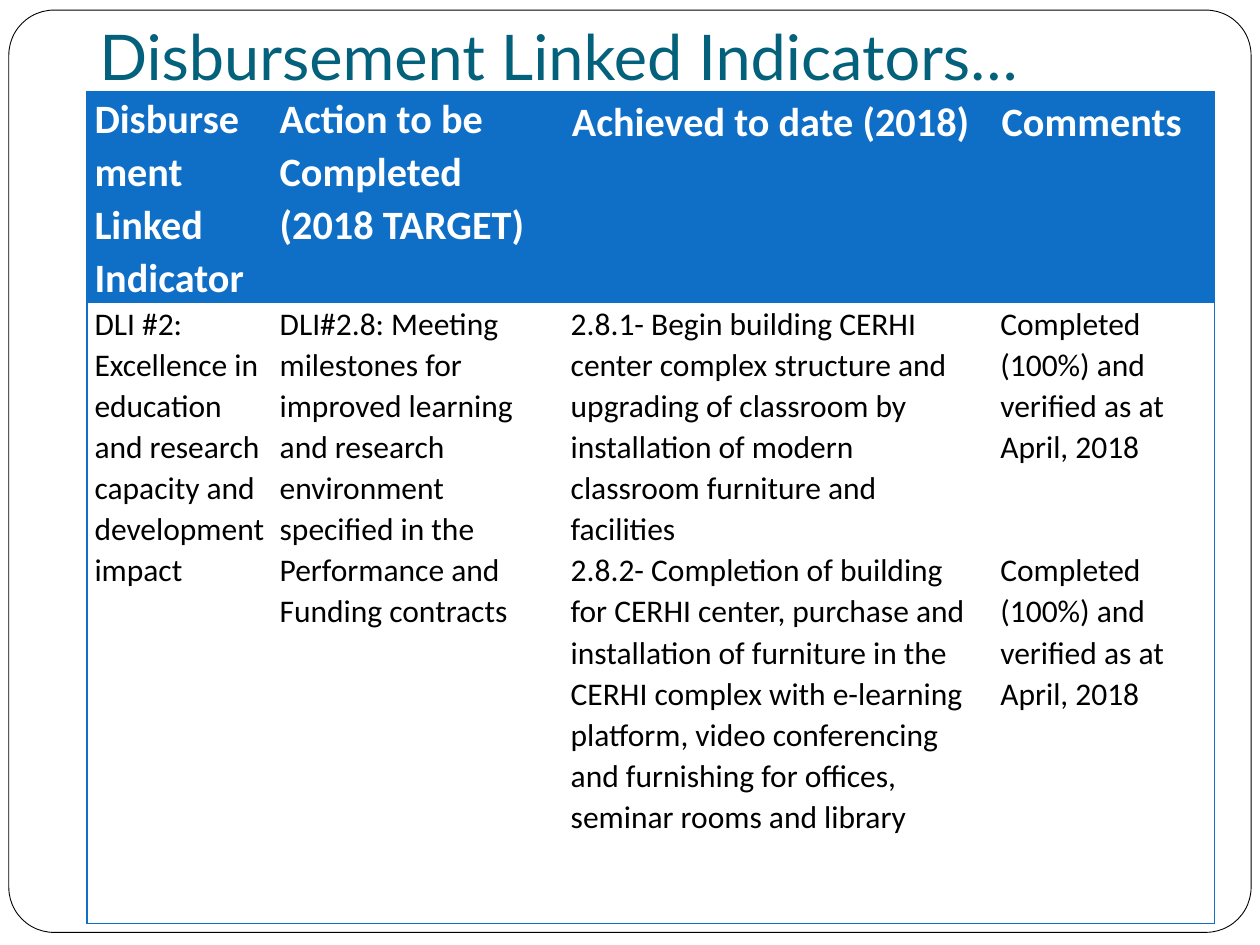
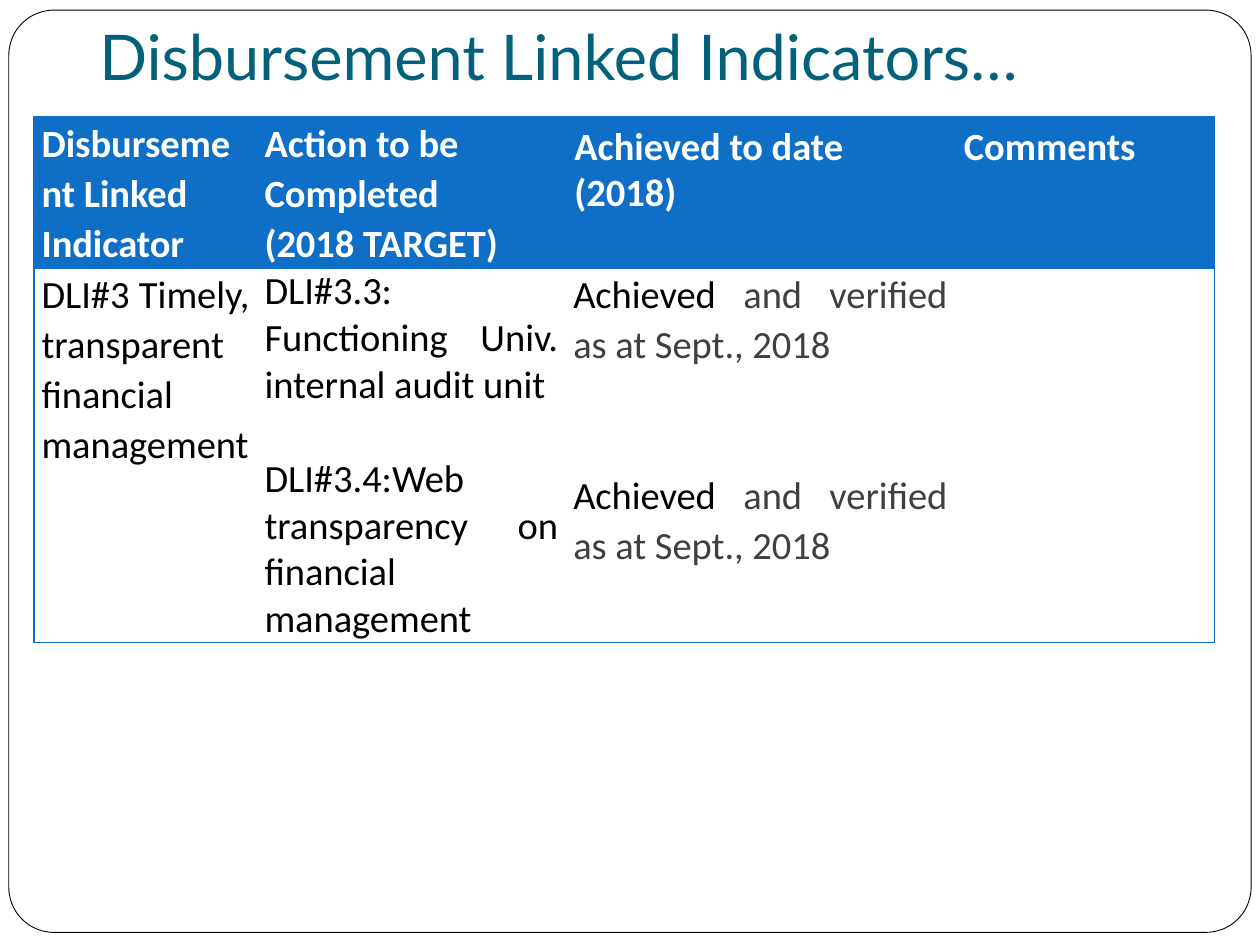
from lxml import etree
from pptx import Presentation
from pptx.dml.color import RGBColor
from pptx.enum import shapes, text
from pptx.oxml.ns import qn
from pptx.util import Inches, Pt

BLUE, TEAL, WHITE, BLACK, GREY = "0F6FC6", "04617B", "FFFFFF", "000000", "404040"
TITLE = "Disbursement Linked Indicators…"
HEADERS = [
    ["Disbursement Linked Indicator"],
    ["Action to be Completed", "(2018 TARGET)"],
    ["Achieved to date (2018)"],
    ["Comments"],
]
LOOSE = 1.07
COMPLETED = "Completed (100%) and verified as at April, 2018"
ACHIEVED = [("Achieved ", BLACK), ("and verified as at Sept., 2018", GREY)]

# Each body cell is a list of paragraphs; a paragraph is a string or a list of
# (words, colour). "gaps" holds points above a paragraph, by (column, paragraph).
TABLES = [
    dict(
        left=0.69, top=0.73, columns=[1.47, 2.31, 3.41, 1.76], rows=[1.67, 4.93],
        header_size=23, body_size=18, justified=False,
        spacing=[LOOSE] * 4, gaps={(3, 1): 47},
        body=[
            ["DLI #2: Excellence in education and research capacity and "
             "development impact"],
            ["DLI#2.8: Meeting milestones for improved learning and research "
             "environment specified in the Performance and Funding contracts"],
            ["2.8.1- Begin building CERHI center complex structure and upgrading "
             "of classroom by installation of modern classroom furniture and "
             "facilities",
             "2.8.2- Completion of building for CERHI center, purchase and "
             "installation of furniture in the CERHI complex with e-learning "
             "platform, video conferencing and furnishing for offices, seminar "
             "rooms and library"],
            [COMPLETED, COMPLETED],
        ],
    ),
    dict(
        left=0.27, top=0.93, columns=[1.77, 2.45, 3.09, 2.06], rows=[1.2, 2.97],
        header_size=22, body_size=22, justified=True,
        spacing=[LOOSE, 1, LOOSE, LOOSE], gaps={(1, 1): 26.8, (2, 1): 57.5},
        body=[
            ["DLI#3 Timely, transparent financial management"],
            ["DLI#3.3: Functioning Univ. internal audit unit",
             "DLI#3.4:Web", "transparency on financial management"],
            [ACHIEVED, ACHIEVED],
            [],
        ],
    ),
]


def rgb(value):
    return RGBColor.from_string(value)


def style(run, font, size, colour, bold=False):
    run.font.name, run.font.size, run.font.bold = font, Pt(size), bold
    run.font.color.rgb = rgb(colour)


def set_insets(frame, left, top, right, bottom):
    frame.margin_left, frame.margin_top = Inches(left), Inches(top)
    frame.margin_right, frame.margin_bottom = Inches(right), Inches(bottom)


def add_frame_and_title(slide):
    border = slide.shapes.add_shape(
        shapes.MSO_SHAPE.ROUNDED_RECTANGLE,
        Inches(0.07), Inches(0.08), Inches(9.86), Inches(7.32))
    border.adjustments[0] = 0.049
    border.shadow.inherit = False
    border.fill.solid()
    border.fill.fore_color.rgb = rgb(WHITE)
    border.line.color.rgb = rgb(BLACK)
    border.line.width = Pt(0.5)

    title = slide.shapes.add_textbox(
        Inches(0.69), Inches(0.12), Inches(8.62), Inches(0.72)).text_frame
    title.word_wrap = True
    title.vertical_anchor = text.MSO_ANCHOR.BOTTOM
    set_insets(title, 0.1, 0.05, 0.1, 0.1)
    title.text = TITLE
    style(title.paragraphs[0].runs[0], "Lato", 36, TEAL)


def set_borders(cell, visible):
    """Draw blue lines on the sides named in visible and none on the others."""
    properties = cell._tc.get_or_add_tcPr()
    for side in "LRTB":
        line = etree.SubElement(properties, qn(f"a:ln{side}"), w=str(Pt(1)))
        if side in visible:
            fill = etree.SubElement(line, qn("a:solidFill"))
            etree.SubElement(fill, qn("a:srgbClr"), val=BLUE)
        else:
            etree.SubElement(line, qn("a:noFill"))


def write_cell(cell, paragraphs, size, colour, bold, spacing, align, gaps):
    for index, content in enumerate(paragraphs):
        frame = cell.text_frame
        paragraph = frame.add_paragraph() if index else frame.paragraphs[0]
        paragraph.line_spacing = spacing
        paragraph.alignment = align
        paragraph.space_before = Pt(gaps.get(index, 0))
        pieces = [(content, colour)] if isinstance(content, str) else content
        for words, shade in pieces:
            run = paragraph.add_run()
            run.text = words
            style(run, "Calibri", size, shade, bold)


def add_indicator_table(slide, data):
    columns, rows = data["columns"], data["rows"]
    table = slide.shapes.add_table(
        len(rows), len(columns), Inches(data["left"]), Inches(data["top"]),
        Inches(sum(columns)), Inches(sum(rows))).table
    table.first_row = table.horz_banding = False
    for row, height in zip(table.rows, rows):
        row.height = Inches(height)
    body_align = text.PP_ALIGN.JUSTIFY if data["justified"] else text.PP_ALIGN.LEFT

    for column, width in enumerate(columns):
        table.columns[column].width = Inches(width)
        header, body = table.cell(0, column), table.cell(1, column)
        outer = {0: "L", len(columns) - 1: "R"}.get(column, "")
        single_line = column >= 2
        for cell in (header, body):
            set_borders(cell, "TB" + outer)
            set_insets(cell, 0.06, 0, 0.06, 0)
        if single_line:
            set_insets(header, 0.07, 0.05, 0.07, 0.05)
        header.fill.solid()
        header.fill.fore_color.rgb = rgb(BLUE)
        body.fill.background()

        write_cell(header, HEADERS[column], data["header_size"], WHITE, True,
                   1 if single_line else LOOSE, text.PP_ALIGN.LEFT, {})
        gaps = {index: gap for (owner, index), gap in data["gaps"].items()
                if owner == column}
        write_cell(body, data["body"][column], data["body_size"], BLACK, False,
                   data["spacing"][column], body_align, gaps)


def main():
    deck = Presentation()
    deck.slide_width, deck.slide_height = Inches(10), Inches(7.5)
    for data in TABLES:
        slide = deck.slides.add_slide(deck.slide_layouts[6])
        add_frame_and_title(slide)
        add_indicator_table(slide, data)
    deck.save("out.pptx")


if __name__ == "__main__":
    main()
